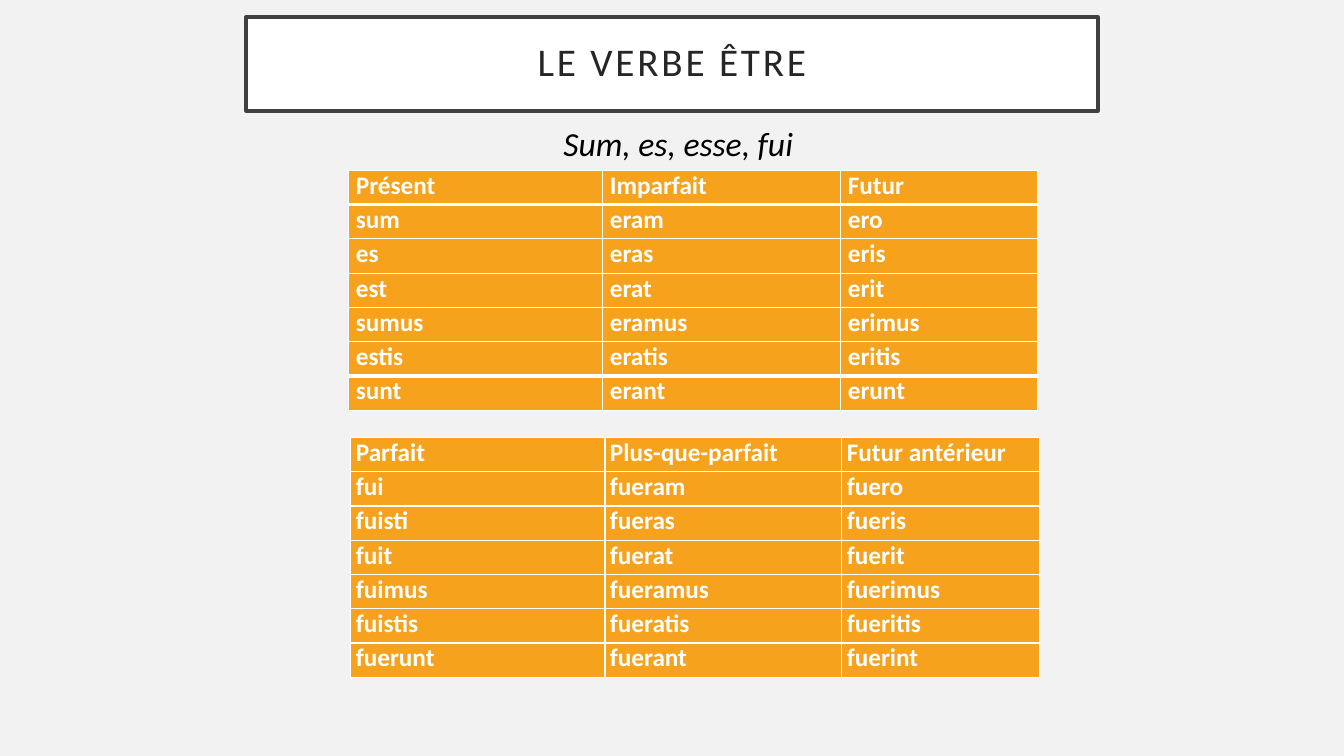
from lxml import etree
from pptx import Presentation
from pptx import util as u
from pptx.dml.color import RGBColor
from pptx.enum import shapes, text
from pptx.oxml.ns import qn

COLORS = {
    "background": "F2F2F2",
    "white": "FFFFFF",
    "frame": "404040",
    "title": "262626",
    "black": "000000",
    "orange": "F6A21D",
}
FONT = "Calibri"
ROW_HEIGHT = 0.34

PRESENT_STEM = [
    ("Présent", "Imparfait", "Futur"),
    ("sum", "eram", "ero"),
    ("es", "eras", "eris"),
    ("est", "erat", "erit"),
    ("sumus", "eramus", "erimus"),
    ("estis", "eratis", "eritis"),
    ("sunt", "erant", "erunt"),
]
PERFECT_STEM = [
    ("Parfait", "Plus-que-parfait", "Futur antérieur"),
    ("fui", "fueram", "fuero"),
    ("fuisti", "fueras", "fueris"),
    ("fuit", "fuerat", "fuerit"),
    ("fuimus", "fueramus", "fuerimus"),
    ("fuistis", "fueratis", "fueritis"),
    ("fuerunt", "fuerant", "fuerint"),
]


def rgb(name):
    return RGBColor.from_string(COLORS[name])


def set_fill(fill, color):
    fill.solid()
    fill.fore_color.rgb = rgb(color)


def write(tf, content, size, color, bold=False, italic=False,
          align=text.PP_ALIGN.LEFT, line_spacing=None, spacing=None):
    """Fill a text frame with one formatted run; spacing is in points."""
    p = tf.paragraphs[0]
    p.alignment = align
    p.line_spacing = line_spacing
    r = p.add_run()
    r.text = content
    r.font.name = FONT
    r.font.size = u.Pt(size)
    r.font.bold = bold
    r.font.italic = italic
    r.font.color.rgb = rgb(color)
    if spacing:
        r.font._element.set("spc", str(spacing * 100))


def add_title(s, content):
    sp = s.shapes.add_shape(shapes.MSO_SHAPE.RECTANGLE, u.Inches(2.44),
                            u.Inches(0.17), u.Inches(8.45), u.Inches(0.93))
    sp.shadow.inherit = False
    set_fill(sp.fill, "white")
    sp.line.color.rgb = rgb("frame")
    sp.line.width = u.Pt(2.5)
    tf = sp.text_frame
    tf.word_wrap = True
    tf.vertical_anchor = text.MSO_ANCHOR.MIDDLE
    tf.margin_left = tf.margin_right = u.Inches(0.2)
    tf.margin_top = tf.margin_bottom = u.Inches(0.2)
    write(tf, content, 28, "title", align=text.PP_ALIGN.CENTER,
          line_spacing=0.9, spacing=2)


def add_subtitle(s, content):
    box = s.shapes.add_textbox(u.Inches(5.49), u.Inches(1.17),
                               u.Inches(3.29), u.Inches(0.5))
    tf = box.text_frame
    tf.word_wrap = True
    tf.auto_size = text.MSO_AUTO_SIZE.SHAPE_TO_FIT_TEXT
    write(tf, content, 24, "black", italic=True)


def set_borders(cell, top, bottom):
    """Draw white cell borders; top and bottom are widths in points."""
    tc_pr = cell._tc.get_or_add_tcPr()
    widths = {"a:lnL": 1, "a:lnR": 1, "a:lnT": top, "a:lnB": bottom}
    for i, (tag, width) in enumerate(widths.items()):
        ln = etree.Element(qn(tag), w=str(u.Pt(width)))
        solid = etree.SubElement(ln, qn("a:solidFill"))
        etree.SubElement(solid, qn("a:srgbClr"), val=COLORS["white"])
        tc_pr.insert(i, ln)


def add_tenses(s, rows, left, top, widths, inset, thick_rules=()):
    """Add a conjugation table; thick_rules lists rows with a heavy top rule."""
    frame = s.shapes.add_table(len(rows), len(widths), u.Inches(left),
                               u.Inches(top), u.Inches(sum(widths)),
                               u.Inches(ROW_HEIGHT * len(rows)))
    table = frame.table
    table.first_row = table.horz_banding = False
    for column, width in zip(table.columns, widths):
        column.width = u.Inches(width)
    for i, forms in enumerate(rows):
        table.rows[i].height = u.Inches(ROW_HEIGHT)
        for j, form in enumerate(forms):
            cell = table.cell(i, j)
            cell.margin_left = cell.margin_right = u.Inches(inset)
            cell.margin_top = cell.margin_bottom = 0
            set_fill(cell.fill, "orange")
            set_borders(cell, 3 if i in thick_rules else 1,
                        3 if i + 1 in thick_rules else 1)
            write(cell.text_frame, form, 18, "white", bold=True)


def main():
    prs = Presentation()
    prs.slide_width = u.Inches(13.33)
    prs.slide_height = u.Inches(7.5)
    s = prs.slides.add_slide(prs.slide_layouts[6])
    set_fill(s.background.fill, "background")
    add_title(s, "LE VERBE ÊTRE")
    add_subtitle(s, "Sum, es, esse, fui")
    add_tenses(s, PRESENT_STEM, 3.46, 1.69, (2.52, 2.36, 1.95), 0.07,
               thick_rules=(1, 6))
    add_tenses(s, PERFECT_STEM, 3.48, 4.34, (2.52, 2.35, 1.96), 0.05)
    prs.save("out.pptx")


if __name__ == "__main__":
    main()
